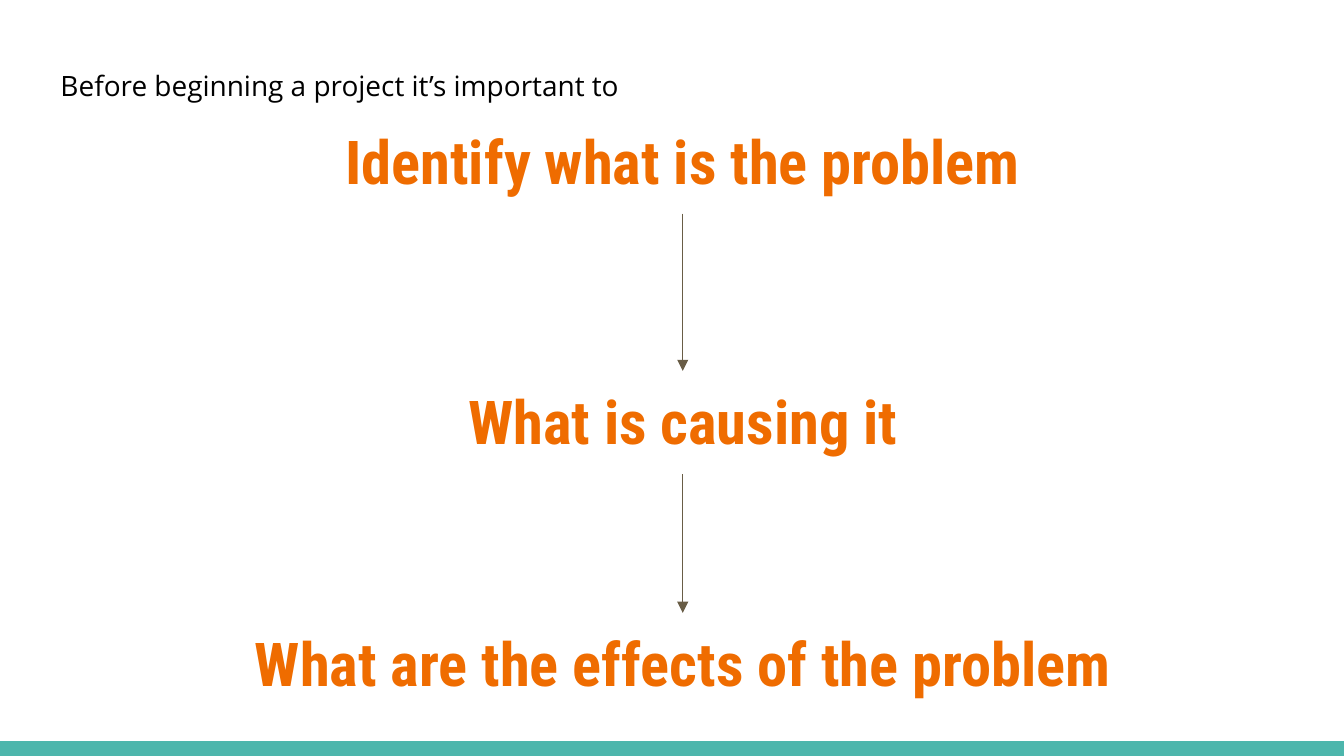
from pptx import Presentation
from pptx.dml.color import RGBColor
from pptx.enum import shapes, text
from pptx.oxml.ns import qn
from pptx.util import Inches, Pt
from lxml import etree

INTRO = "Before beginning a project it’s important to"
STEPS = [  # wording, top in inches
    ("Identify what is the problem", 0.82),
    ("What is causing it", 2.76),
    ("What are the effects of the problem", 4.56),
]

ORANGE = RGBColor(0xEF, 0x6C, 0x00)
TEAL = RGBColor(0x4D, 0xB6, 0xAC)
BROWN = RGBColor(0x69, 0x5D, 0x46)
BLACK = RGBColor(0, 0, 0)

STEP_LEFT, STEP_WIDTH, STEP_HEIGHT = 0.42, 9.32, 0.77
BAR_HEIGHT = Inches(0.11)


def place(shape, left, top, width, height):
    shape.left, shape.top = Inches(left), Inches(top)
    shape.width, shape.height = Inches(width), Inches(height)


def write(shape, wording, font_name, size, color, bold, align):
    frame = shape.text_frame
    frame.text = wording
    frame.word_wrap = True
    frame.auto_size = text.MSO_AUTO_SIZE.NONE
    frame.vertical_anchor = text.MSO_ANCHOR.TOP
    frame.margin_left = frame.margin_right = Inches(0.1)
    frame.margin_top = frame.margin_bottom = Inches(0.1)
    paragraph = frame.paragraphs[0]
    paragraph.alignment = align
    paragraph.space_before = Pt(0)
    font = paragraph.runs[0].font
    font.name, font.size, font.bold = font_name, Pt(size), bold
    font.color.rgb = color
    return paragraph


def add_arrow(slide, upper, lower):
    arrow = slide.shapes.add_connector(shapes.MSO_CONNECTOR.STRAIGHT, 0, 0, 0, 0)
    arrow.begin_connect(upper, 2)
    arrow.end_connect(lower, 0)
    arrow.line.color.rgb = BROWN
    arrow.line.width = Pt(0.75)
    etree.SubElement(arrow.line._get_or_add_ln(), qn("a:tailEnd"), type="triangle")
    etree.SubElement(arrow._element.spPr, qn("a:effectLst"))


def main():
    deck = Presentation()
    deck.slide_width = Inches(10)
    deck.slide_height = deck.slide_width * 9 // 16
    slide = deck.slides.add_slide(deck.slide_layouts[1])

    bar = slide.shapes.add_shape(
        shapes.MSO_SHAPE.RECTANGLE, 0, deck.slide_height - BAR_HEIGHT,
        deck.slide_width, BAR_HEIGHT)
    bar.shadow.inherit = False
    bar.fill.solid()
    bar.fill.fore_color.rgb = TEAL
    bar.line.fill.background()

    intro = slide.placeholders[1]
    place(intro, 0.35, 0.37, 9.06, 0.34)
    paragraph = write(intro, INTRO, "Open Sans", 15, BLACK, False,
                      text.PP_ALIGN.LEFT)
    paragraph.line_spacing = 1.15
    properties = paragraph._p.get_or_add_pPr()
    properties.set("marL", "0")
    properties.set("indent", "0")
    etree.SubElement(properties, qn("a:buNone"))

    previous = None
    for wording, top in STEPS:
        step = slide.shapes.add_textbox(0, 0, 0, 0) if previous else slide.shapes.title
        place(step, STEP_LEFT, top, STEP_WIDTH, STEP_HEIGHT)
        write(step, wording, "Roboto Condensed", 32.4, ORANGE, True,
              text.PP_ALIGN.CENTER)
        if previous:
            add_arrow(slide, previous, step)
        previous = step

    deck.save("out.pptx")


if __name__ == "__main__":
    main()
